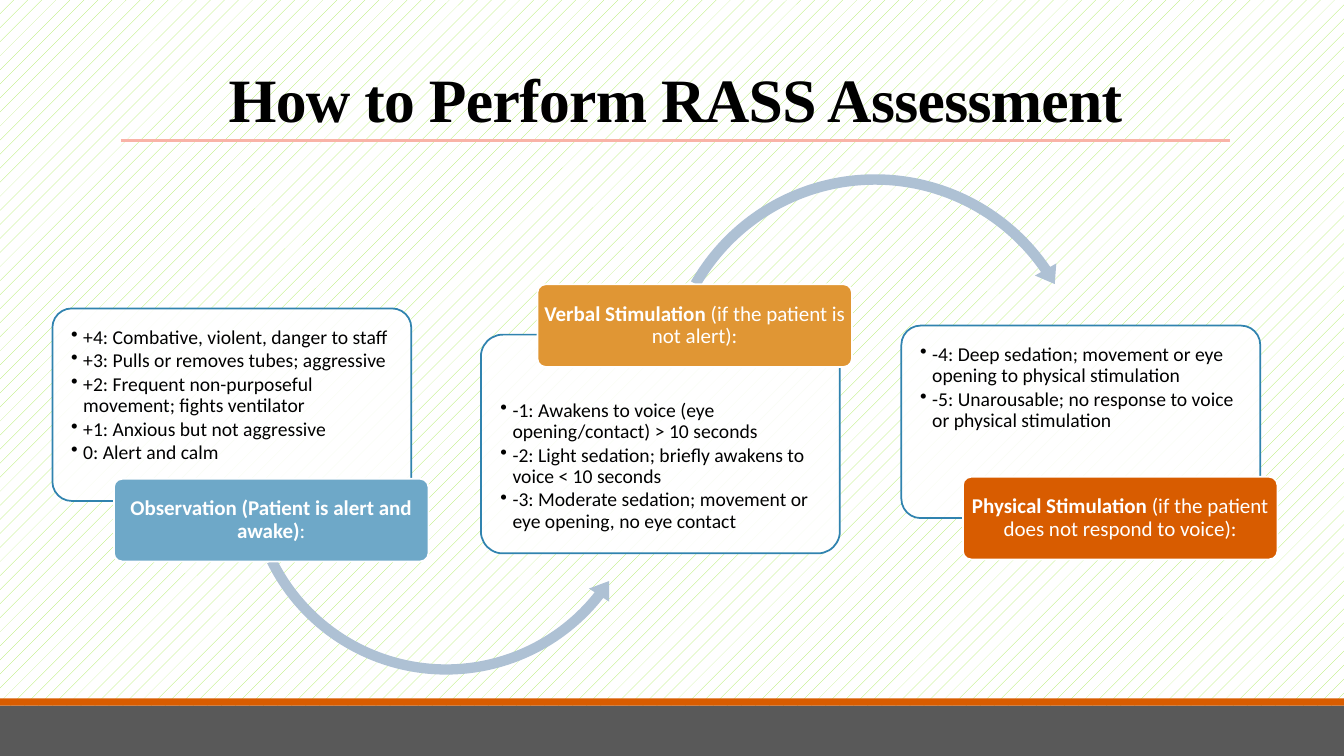
from pptx import Presentation
from pptx.dml.color import RGBColor
from pptx.enum.dml import MSO_PATTERN
from pptx.enum.shapes import MSO_CONNECTOR, MSO_SHAPE
from pptx.enum.text import MSO_ANCHOR, PP_ALIGN
from pptx.oxml.ns import qn
from pptx.util import Inches, Pt
from lxml.etree import SubElement

HUES = {
    "white": "FFFFFF", "black": "000000", "lime": "A7EA52",
    "gray": "595959", "rust": "D85C00", "pink": "F9B3A7",
    "edge": "3083AF", "arc": "AEC1D4", "blue": "6EA8C8", "gold": "E09634",
}

# Each step: card (left, top, height, top inset), label (left, top, hue, bold, plain), items
STEPS = [
    ((0.52, 3.06, 1.91, 0.13),
     (1.13, 4.75, "blue", "Observation (Patient is alert and awake)", ":"),
     ["+4: Combative, violent, danger to staff",
      "+3: Pulls or removes tubes; aggressive",
      "+2: Frequent non-purposeful movement; fights ventilator",
      "+1: Anxious but not aggressive",
      "0: Alert and calm"]),
    ((4.77, 3.32, 2.17, 0.59),
     (5.33, 2.82, "gold", "Verbal Stimulation", " (if the patient is not alert):"),
     ["-1: Awakens to voice (eye opening/contact) > 10 seconds",
      "-2: Light sedation; briefly awakens to voice < 10 seconds",
      "-3: Moderate sedation; movement or eye opening, no eye contact"]),
    ((8.94, 3.23, 1.91, 0.13),
     (9.55, 4.73, "rust", "Physical Stimulation",
      " (if the patient does not respond to voice):"),
     ["-4: Deep sedation; movement or eye opening to physical stimulation",
      "-5: Unarousable; no response to voice or physical stimulation"]),
]

# Arrow out of a step: kind, left, top, size, width %, three angles, head %
ARCS = [
    (MSO_SHAPE.LEFT_CIRCULAR_ARROW, 2.38, 2.67, 4.09, 2.5, (5.07, 38.09, 153.83), 2.9),
    (MSO_SHAPE.CIRCULAR_ARROW, 6.51, 1.66, 4.34, 2.4, (4.77, 325.65, 209.61), 2.8),
]


def color(name):
    return RGBColor.from_string(HUES[name])


def add_box(slide, kind, left, top, width, height, fill, line=None):
    box = slide.shapes.add_shape(
        kind, Inches(left), Inches(top), Inches(width), Inches(height))
    box.shadow.inherit = False
    box.fill.solid()
    box.fill.fore_color.rgb = color(fill)
    if line:
        box.line.color.rgb = color(line)
        box.line.width = Pt(1.25)
    else:
        box.line.fill.background()
    return box


def set_frame(shape, anchor, side, top, bottom):
    frame = shape.text_frame
    frame.word_wrap = True
    frame.vertical_anchor = anchor
    frame.margin_left = frame.margin_right = Inches(side)
    frame.margin_top, frame.margin_bottom = Inches(top), Inches(bottom)
    return frame


def add_run(para, text, size, hue, bold=False, face="Calibri"):
    run = para.add_run()
    run.text = text
    font = run.font
    font.size, font.bold, font.name = Pt(size), bold, face
    font.color.rgb = color(hue)
    return run


def add_card(slide, left, top, height, inset, items):
    card = add_box(slide, MSO_SHAPE.ROUNDED_RECTANGLE,
                   left, top, 3.56, height, "white", "edge")
    card.adjustments[0] = 0.1
    # Let the backdrop show through slightly
    tone = card.fill._xPr.find(qn("a:solidFill"))[0]
    SubElement(tone, qn("a:alpha")).set("val", "90000")
    frame = set_frame(card, MSO_ANCHOR.TOP, 0.13, inset, 0.13)
    for i, item in enumerate(items):
        para = frame.add_paragraph() if i else frame.paragraphs[0]
        para.level = 1
        para.alignment = PP_ALIGN.LEFT
        para.line_spacing = 0.9
        para.space_after = Pt(1.7)
        props = para._p.get_or_add_pPr()
        props.set("marL", str(Inches(0.12)))
        props.set("indent", str(-Inches(0.12)))
        SubElement(props, qn("a:buChar")).set("char", "•")
        add_run(para, item, 14, "black")


def add_label(slide, left, top, hue, bold, plain):
    label = add_box(slide, MSO_SHAPE.ROUNDED_RECTANGLE,
                    left, top, 3.12, 0.82, hue, "white")
    label.adjustments[0] = 0.1
    para = set_frame(label, MSO_ANCHOR.MIDDLE, 0.03, 0.02, 0.02).paragraphs[0]
    para.alignment = PP_ALIGN.CENTER
    para.line_spacing = 0.9
    add_run(para, bold, 15, "white", True)
    add_run(para, plain, 15, "white")


def add_arc(slide, kind, left, top, size, width, angles, head):
    arc = add_box(slide, kind, left, top, size, size, "arc")
    # One degree is 0.6 of an adjustment unit
    values = [width / 100, *(angle * 0.6 for angle in angles), head / 100]
    for i, value in enumerate(values):
        arc.adjustments[i] = value


def add_title(slide, text):
    rule = slide.shapes.add_connector(
        MSO_CONNECTOR.STRAIGHT, Inches(1.2), Inches(1.39), Inches(12.2), Inches(1.39))
    rule.line.color.rgb = color("pink")
    rule.line.width = Pt(2.25)
    SubElement(rule._element.spPr, qn("a:effectLst"))
    box = slide.shapes.add_textbox(Inches(1.2), Inches(0.31), Inches(11), Inches(1.08))
    para = set_frame(box, MSO_ANCHOR.BOTTOM, 0.1, 0.05, 0.05).paragraphs[0]
    para.alignment = PP_ALIGN.CENTER
    para.line_spacing = 0.85
    run = add_run(para, text, 44, "black", True, "Times New Roman")
    run._r.get_or_add_rPr().set("spc", "-50")


def main():
    deck = Presentation()
    deck.slide_width, deck.slide_height = Inches(13.33), Inches(7.5)
    slide = deck.slides.add_slide(deck.slide_layouts[6])

    # Backdrop and footer bands
    fill = slide.background.fill
    fill.patterned()
    fill.pattern = MSO_PATTERN.PERCENT_5
    fill.fore_color.rgb = color("lime")
    fill.back_color.rgb = color("white")
    add_box(slide, MSO_SHAPE.RECTANGLE, 0, 7, 13.33, 0.5, "gray")
    add_box(slide, MSO_SHAPE.RECTANGLE, 0, 6.93, 13.33, 0.07, "rust")

    add_title(slide, "How to Perform RASS Assessment")

    # Steps, each with the arrow to the next one
    for i, (card, label, items) in enumerate(STEPS):
        add_card(slide, *card, items)
        if i < len(ARCS):
            add_arc(slide, *ARCS[i])
        add_label(slide, *label)

    deck.save("out.pptx")


if __name__ == "__main__":
    main()
